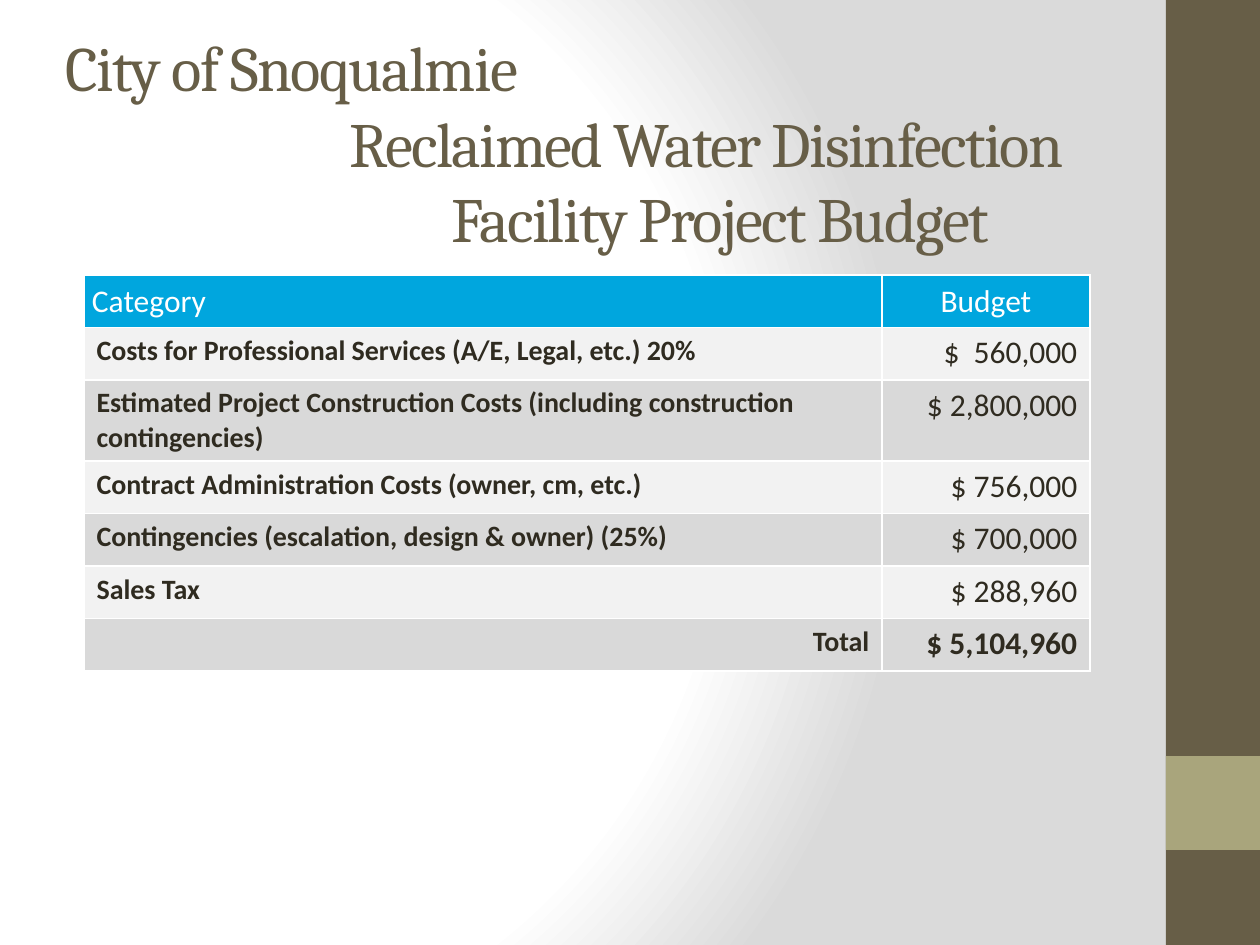
from lxml import etree
from pptx import Presentation
from pptx.dml.color import RGBColor
from pptx.enum.shapes import MSO_SHAPE
from pptx.enum.text import MSO_ANCHOR, PP_ALIGN
from pptx.oxml import parse_xml
from pptx.oxml.ns import nsdecls, qn
from pptx.util import Pt

LEFT, CENTER, RIGHT = PP_ALIGN.LEFT, PP_ALIGN.CENTER, PP_ALIGN.RIGHT
TOP, MIDDLE = MSO_ANCHOR.TOP, MSO_ANCHOR.MIDDLE
RECTANGLE = MSO_SHAPE.RECTANGLE
TITLE_ONLY = 5
EMU_PER_INCH, PX_PER_INCH = 914400, 126

BROWN, OLIVE, WHITE, INK = "675E47", "A9A57C", "FFFFFF", "2F2B20"
HEADER_BLUE, BANDS = "00A6DE", ("F2F2F2", "D9D9D9")

TITLE_LINES = [
    ("City of Snoqualmie", LEFT, 0),
    ("Reclaimed Water Disinfection", LEFT, 284),
    ("Facility Project Budget", CENTER, 0),
]
BUDGET = [
    ("Costs for Professional Services (A/E, Legal, etc.) 20%", "$  560,000"),
    ("Estimated Project Construction Costs (including construction contingencies)",
     "$ 2,800,000"),
    ("Contract Administration Costs (owner, cm, etc.)", "$ 756,000"),
    ("Contingencies (escalation, design & owner) (25%)", "$ 700,000"),
    ("Sales Tax", "$ 288,960"),
    ("Total", "$ 5,104,960"),
]


def px(length):
    return round(length * EMU_PER_INCH / PX_PER_INCH)


def color(hex_value):
    return RGBColor.from_string(hex_value)


def write(paragraph, text, size, ink, font="Calibri", bold=False, align=LEFT,
          indent=0, tracking=0):
    paragraph.alignment = align
    run = paragraph.add_run()
    run.text = text
    run.font.size = Pt(size)
    run.font.name = font
    run.font.bold = bold
    run.font.color.rgb = color(ink)
    if indent:
        paragraph._p.get_or_add_pPr().set("marL", str(px(indent)))
    if tracking:
        run._r.get_or_add_rPr().set("spc", str(tracking * 100))


def paint_background(slide):
    slide.background.fill.gradient()
    stops = "".join(
        f'<a:gs pos="{percent * 1000}"><a:srgbClr val="{shade}"/></a:gs>'
        for percent, shade in ((0, WHITE), (75, WHITE), (100, "DADADA")))
    gradient = parse_xml(
        f'<a:gradFill {nsdecls("a")} rotWithShape="1"><a:gsLst>{stops}</a:gsLst>'
        '<a:path path="circle"><a:fillToRect l="20000" t="50000" r="100000" b="50000"/>'
        '</a:path></a:gradFill>')
    properties = slide.element.find(".//" + qn("p:bgPr"))
    properties.replace(properties.find(qn("a:gradFill")), gradient)


def add_block(slide, left, top, width, height, fill):
    block = slide.shapes.add_shape(RECTANGLE, px(left), px(top), px(width), px(height))
    block.shadow.inherit = False
    block.fill.solid()
    block.fill.fore_color.rgb = color(fill)
    block.line.fill.background()


def add_sidebar(slide, left, top, width, height):
    add_block(slide, left, top, width, height, BROWN)
    add_block(slide, left, top + height * 0.8, width, width, OLIVE)


def fill_title(slide, left, top, width, height):
    title = slide.shapes.title
    title.left, title.top, title.width, title.height = map(px, (left, top, width, height))
    frame = title.text_frame
    frame.word_wrap = True
    frame.vertical_anchor = MIDDLE
    for index, (line, align, indent) in enumerate(TITLE_LINES):
        paragraph = frame.add_paragraph() if index else frame.paragraphs[0]
        write(paragraph, line, 36, BROWN, font="Cambria", align=align,
              indent=indent, tracking=-1)


def style_cell(cell, fill, anchor):
    cell.vertical_anchor = anchor
    properties = cell._tc.get_or_add_tcPr()
    for side in ("lnL", "lnR", "lnT", "lnB"):
        border = etree.SubElement(properties, qn(f"a:{side}"), w=str(Pt(1)))
        solid = etree.SubElement(border, qn("a:solidFill"))
        etree.SubElement(solid, qn("a:srgbClr"), val=WHITE)
    cell.fill.solid()
    cell.fill.fore_color.rgb = color(fill)


def add_budget_table(slide, left, top, column_widths, row_height):
    rows = len(BUDGET) + 1
    table = slide.shapes.add_table(rows, len(column_widths), px(left), px(top),
                                   px(sum(column_widths)), px(row_height * rows)).table
    for column, width in zip(table.columns, column_widths):
        column.width = px(width)
    for row in table.rows:
        row.height = px(row_height)

    for index, (heading, align) in enumerate((("Category", LEFT), ("Budget", CENTER))):
        cell = table.cell(0, index)
        style_cell(cell, HEADER_BLUE, MIDDLE)
        cell.margin_left = px(1 if index else 8)
        cell.margin_right = cell.margin_top = px(1)
        cell.margin_bottom = 0
        write(cell.text_frame.paragraphs[0], heading, 18, WHITE, align=align)

    for index, (category, amount) in enumerate(BUDGET):
        is_total = category == "Total"
        category_cell, amount_cell = table.cell(index + 1, 0), table.cell(index + 1, 1)
        for cell in (category_cell, amount_cell):
            style_cell(cell, BANDS[index % 2], TOP)
        write(category_cell.text_frame.paragraphs[0], category, 16, INK, bold=True,
              align=RIGHT if is_total else LEFT)
        write(amount_cell.text_frame.paragraphs[0], amount, 18, INK, bold=is_total,
              align=RIGHT)


def main():
    presentation = Presentation()
    presentation.slide_width, presentation.slide_height = px(1260), px(945)
    slide = presentation.slides.add_slide(presentation.slide_layouts[TITLE_ONLY])
    paint_background(slide)
    add_sidebar(slide, 1166, 0, 94, 945)
    fill_title(slide, 53, 32, 1050, 220)
    add_budget_table(slide, 84, 275, (798, 208), 52.5)
    presentation.save("out.pptx")


if __name__ == "__main__":
    main()
